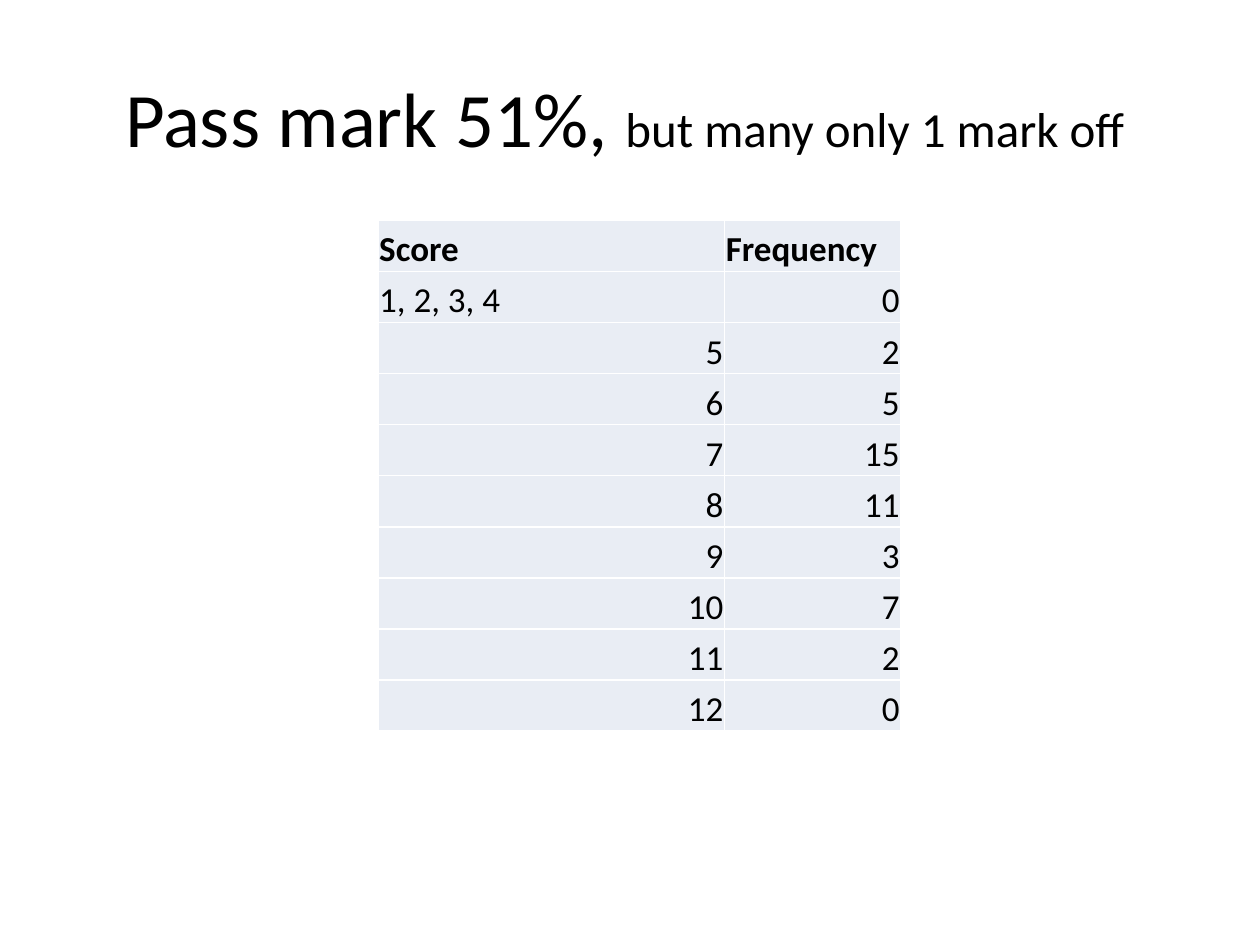
import pptx
import pptx.util
import pptx.dml.color
import pptx.enum.text
import pptx.oxml.ns
import lxml.etree

BLACK = pptx.dml.color.RGBColor(0x00, 0x00, 0x00)
WHITE = pptx.dml.color.RGBColor(0xFF, 0xFF, 0xFF)
PALE_BLUE = pptx.dml.color.RGBColor(0xE9, 0xED, 0xF4)
ALIGN = pptx.enum.text.PP_ALIGN
ANCHOR = pptx.enum.text.MSO_ANCHOR
FONT = "Calibri"

SLIDE_W = pptx.util.Inches(10)
SLIDE_H = pptx.util.Inches(7.5)
TITLE_BOX = (0.05, 0.04, 0.9, 1 / 6)
TABLE_BOX = (0.3, 0.233, 0.415, 0.541)
COLUMN_SHARES = (0.663, 0.337)

ROWS = [
    ("Score", "Frequency"),
    ("1, 2, 3, 4", "0"),
    ("5", "2"),
    ("6", "5"),
    ("7", "15"),
    ("8", "11"),
    ("9", "3"),
    ("10", "7"),
    ("11", "2"),
    ("12", "0"),
]


def to_emu(box):
    x, y, w, h = box
    return int(x * SLIDE_W), int(y * SLIDE_H), int(w * SLIDE_W), int(h * SLIDE_H)


def add_text(p, text, size=20, bold=False, color=BLACK, align=ALIGN.LEFT):
    p.alignment = align
    r = p.add_run()
    r.text = text
    r.font.name = FONT
    r.font.size = pptx.util.Pt(size)
    r.font.bold = bold
    r.font.color.rgb = color


def set_borders(cell, color, width):
    tc_pr = cell._tc.get_or_add_tcPr()
    qn = pptx.oxml.ns.qn
    for side in ("a:lnL", "a:lnR", "a:lnT", "a:lnB"):
        ln = lxml.etree.SubElement(tc_pr, qn(side), w=str(pptx.util.Pt(width)))
        fill = lxml.etree.SubElement(ln, qn("a:solidFill"))
        lxml.etree.SubElement(fill, qn("a:srgbClr"), val=str(color))


def place_title(s, box):
    sp = s.shapes.title
    sp.left, sp.top, sp.width, sp.height = to_emu(box)
    tf = sp.text_frame
    tf.word_wrap = True
    tf.vertical_anchor = ANCHOR.MIDDLE
    p = tf.paragraphs[0]
    add_text(p, "Pass mark 51%, ", size=44, align=ALIGN.CENTER)
    add_text(p, "but many only 1 mark off ", size=28, align=ALIGN.CENTER)


def format_cell(cell, text, header):
    cell.margin_left = cell.margin_right = cell.margin_top = pptx.util.Inches(0.01)
    cell.margin_bottom = 0
    cell.vertical_anchor = ANCHOR.BOTTOM
    set_borders(cell, WHITE, 1)
    cell.fill.solid()
    cell.fill.fore_color.rgb = PALE_BLUE
    align = ALIGN.RIGHT if text.isdigit() else ALIGN.LEFT
    add_text(cell.text_frame.paragraphs[0], text, bold=header, align=align)


def place_score_table(s, box):
    x, y, w, h = to_emu(box)
    table = s.shapes.add_table(len(ROWS), len(COLUMN_SHARES), x, y, w, h).table
    table.first_row = False
    table.horz_banding = False
    for column, share in zip(table.columns, COLUMN_SHARES):
        column.width = int(w * share)
    for i, values in enumerate(ROWS):
        for j, text in enumerate(values):
            format_cell(table.cell(i, j), text, header=i == 0)


def main():
    prs = pptx.Presentation()
    prs.slide_width, prs.slide_height = SLIDE_W, SLIDE_H
    s = prs.slides.add_slide(prs.slide_layouts[5])
    place_title(s, TITLE_BOX)
    place_score_table(s, TABLE_BOX)
    prs.save("out.pptx")


if __name__ == "__main__":
    main()
